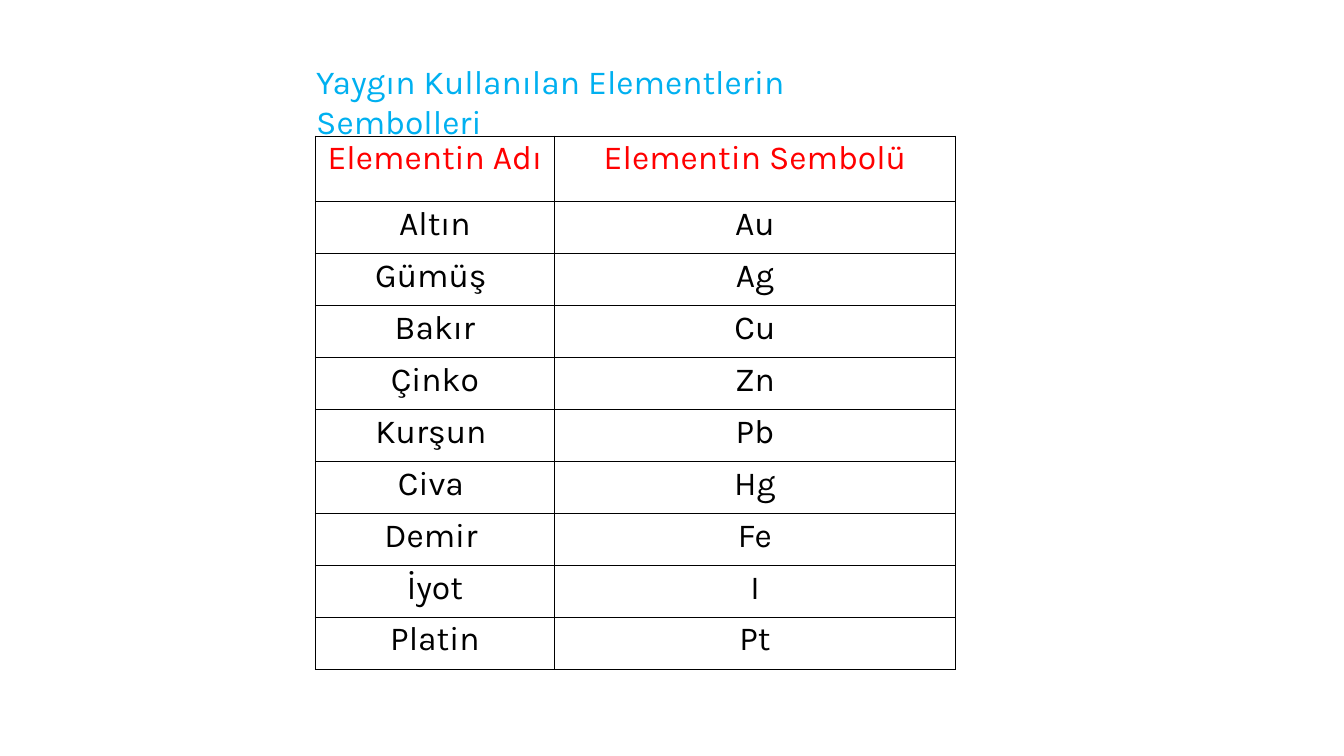
from lxml import etree
from pptx import Presentation
from pptx.dml.color import RGBColor
from pptx.enum import text
from pptx.oxml import parse_xml
from pptx.oxml.ns import nsdecls
from pptx.util import Cm, Pt

FONT = "Karla"
BLUE, RED, BLACK = "00B0F0", "FF0000", "000000"
COLUMN_WIDTHS = (6.02, 10.11)
HEADER_HEIGHT, ROW_HEIGHT = 1.65, 1.31

HEADER = ("Elementin Adı", "Elementin Sembolü")
ELEMENTS = [
    ("Altın", "Au"),
    ("Gümüş ", "Ag"),
    ("Bakır", "Cu"),
    ("Çinko", "Zn"),
    ("Kurşun ", "Pb"),
    ("Civa ", "Hg"),
    ("Demir ", "Fe"),
    ("İyot", "I"),
]
LAST_ELEMENT = ("Platin", "Pt")


def color(value):
    return RGBColor.from_string(value)


def add_run(paragraph, words, hex_color):
    run = paragraph.add_run()
    run.text = words
    run.font.name = FONT
    run.font.size = Pt(24)
    run.font.color.rgb = color(hex_color)


def add_title(slide, left, top, width, height):
    box = slide.shapes.add_textbox(Cm(left), Cm(top), Cm(width), Cm(height))
    frame = box.text_frame
    frame.word_wrap = True
    add_run(frame.paragraphs[0], "Yaygın Kullanılan Elementlerin Sembolleri", BLUE)


def add_borders(cell):
    properties = cell._tc.get_or_add_tcPr()
    for side in ("lnL", "lnR", "lnT", "lnB"):
        properties.append(parse_xml(
            f'<a:{side} {nsdecls("a")} w="{Pt(1)}"><a:solidFill>'
            f'<a:srgbClr val="{BLACK}"/></a:solidFill></a:{side}>'))


def fill_cell(cell, words, hex_color):
    add_borders(cell)
    cell.fill.background()
    cell.margin_left = cell.margin_right = Cm(0.18)
    cell.margin_top = cell.margin_bottom = 0
    paragraph = cell.text_frame.paragraphs[0]
    paragraph.alignment = text.PP_ALIGN.CENTER
    paragraph.line_spacing = 1.07
    add_run(paragraph, words, hex_color)


def add_element_table(slide, left, top, rows, has_header):
    """Place a table and return the position of its bottom edge."""
    heights = [ROW_HEIGHT] * len(rows)
    if has_header:
        heights[0] = HEADER_HEIGHT
    table = slide.shapes.add_table(
        len(rows), len(COLUMN_WIDTHS), Cm(left), Cm(top),
        Cm(sum(COLUMN_WIDTHS)), Cm(sum(heights))).table
    table.first_row = has_header
    table.horz_banding = False
    for column, width in zip(table.columns, COLUMN_WIDTHS):
        column.width = Cm(width)
    for index, (row, height) in enumerate(zip(table.rows, heights)):
        row.height = Cm(height)
        hex_color = RED if has_header and index == 0 else BLACK
        for cell, words in zip(row.cells, rows[index]):
            fill_cell(cell, words, hex_color)
            cell.text_frame.paragraphs[0].runs[0].font.bold = False
    return top + sum(heights)


def main():
    presentation = Presentation()
    presentation.slide_width = Cm(33.87)
    presentation.slide_height = Cm(19.05)
    slide = presentation.slides.add_slide(presentation.slide_layouts[6])

    # Title
    add_title(slide, 7.72, 1.4, 16.03, 1.27)

    # Main table, with the last element in its own table right below
    bottom = add_element_table(slide, 7.95, 3.43, [HEADER, *ELEMENTS], True)
    add_element_table(slide, 7.95, bottom, [LAST_ELEMENT], False)

    presentation.save("out.pptx")


if __name__ == "__main__":
    main()
